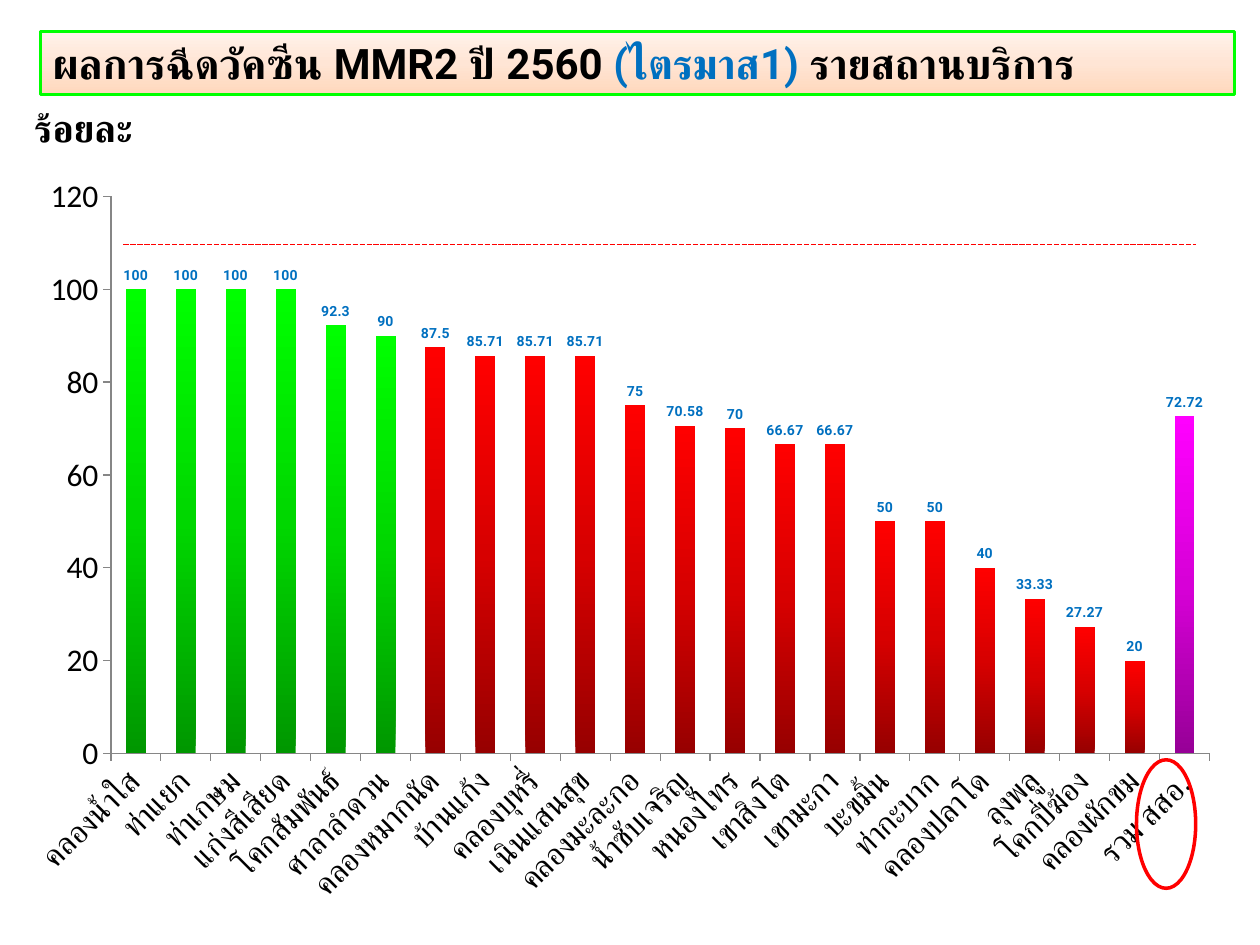
from copy import deepcopy
from dataclasses import dataclass

from lxml.etree import SubElement
from pptx import Presentation
from pptx.chart.data import CategoryChartData
from pptx.dml.color import RGBColor
from pptx.enum.chart import XL_CHART_TYPE, XL_LABEL_POSITION, XL_TICK_MARK
from pptx.enum.dml import MSO_LINE
from pptx.enum.shapes import MSO_CONNECTOR, MSO_SHAPE
from pptx.enum.text import MSO_ANCHOR, MSO_AUTO_SIZE, PP_ALIGN
from pptx.oxml.ns import qn
from pptx.slide import Slide
from pptx.util import Inches, Pt

COVERAGE = {
    "คลองน้ำใส": 100, "ท่าแยก": 100, "ท่าเกษม": 100, "แก่งสีเสียด": 100,
    "โคกสัมพันธ์": 92.3, "ศาลาลำดวน": 90, "คลองหมากนัด": 87.5,
    "บ้านแก้ง": 85.71, "คลองบุหรี่": 85.71, "เนินแสนสุข": 85.71,
    "คลองมะละกอ": 75, "น้ำซับเจริญ": 70.58, "หนองไทร": 70,
    "เขาสิงโต": 66.67, "เขามะกา": 66.67, "บะขมิ้น": 50, "ท่ากะบาก": 50,
    "คลองปลาโด": 40, "ลุงพลู": 33.33, "โคกปี่ฆ้อง": 27.27,
    "คลองผักขม": 20, "รวม สสอ.": 72.72,
}
TOTAL = "รวม สสอ."
PASS_MARK = 90
RED = ("970000", "D70000", "FF0000")
GREEN = ("009700", "00D700", "00FF00")
MAGENTA = ("970097", "D700D7", "FF00FF")
PEACH = ("FFD8BC", "FFE5D5", "FFF2EA")


def rgb(value):
    return RGBColor.from_string(value)


def set_font(font, name, size, color, bold=False):
    font.name, font.size, font.bold = name, Pt(size), bold
    font.color.rgb = rgb(color)


def set_gradient(fill, colors):
    fill.gradient()
    fill.gradient_angle = 90
    first = fill.gradient_stops[0]._gs
    first.addnext(deepcopy(first))
    for stop, color, position in zip(fill.gradient_stops, colors, (0, 0.5, 1)):
        stop.color.rgb = rgb(color)
        stop.position = position


def set_layout(parent, index, **values):
    for existing in parent.findall(qn("c:layout")):
        parent.remove(existing)
    layout = SubElement(parent, qn("c:layout"))
    parent.insert(index, layout)
    manual = SubElement(layout, qn("c:manualLayout"))
    for tag, value in values.items():
        SubElement(manual, qn(f"c:{tag}")).set("val", str(value))


@dataclass
class CoverageSlide:
    """Draws the elements of the vaccine coverage slide in one style."""

    slide: Slide
    heading_font: str = "Roboto"
    axis_font: str = "Calibri"
    text_color: str = "000000"
    accent: str = "0070C0"

    def chart(self, left, top, width, height, title, values):
        data = CategoryChartData()
        data.categories = list(values)
        data.add_series(title, list(values.values()))
        chart = self.slide.shapes.add_chart(
            XL_CHART_TYPE.COLUMN_CLUSTERED, Inches(left), Inches(top),
            Inches(width), Inches(height), data).chart
        set_font(chart.font, self.axis_font, 18, self.text_color)
        chart.has_legend = False
        self.chart_title(chart, title)
        self.axes(chart)
        self.columns(chart.plots[0], values)
        set_layout(chart._chartSpace.chart.plotArea, 0, layoutTarget="inner",
                   xMode="edge", yMode="edge", x=0.76 / width, y=0.96 / height,
                   w=8.72 / width, h=4.42 / height)

    def chart_title(self, chart, text):
        chart.has_title = True
        title = chart.chart_title
        title.text_frame.text = text
        run = title.text_frame.paragraphs[0].runs[0]
        set_font(run.font, self.heading_font, 21.6, self.text_color, True)
        set_layout(title._element, 1, xMode="edge", yMode="edge", x=0.01, y=0.03)

    def axes(self, chart):
        for axis in (chart.category_axis, chart.value_axis):
            axis.has_major_gridlines = False
            axis.major_tick_mark = XL_TICK_MARK.OUTSIDE
            axis.minor_tick_mark = XL_TICK_MARK.NONE
            axis.format.line.color.rgb = rgb("868686")
            axis.format.line.width = Pt(0.75)
            set_font(axis.tick_labels.font, self.axis_font, 18, self.text_color)
        chart.category_axis._element.txPr.bodyPr.set("rot", "-2700000")
        scale = chart.value_axis
        scale.minimum_scale, scale.maximum_scale, scale.major_unit = 0, 120, 20

    def columns(self, plot, values):
        plot.gap_width = 150
        plot.vary_by_categories = False
        series = plot.series[0]
        set_gradient(series.format.fill, RED)
        for index, (name, value) in enumerate(values.items()):
            if name == TOTAL:
                set_gradient(series.points[index].format.fill, MAGENTA)
            elif value >= PASS_MARK:
                set_gradient(series.points[index].format.fill, GREEN)
        labels = series.data_labels
        labels.show_value = True
        labels.position = XL_LABEL_POSITION.OUTSIDE_END
        set_font(labels.font, self.heading_font, 8, self.accent, True)

    def target_line(self, left, right, top):
        line = self.slide.shapes.add_connector(
            MSO_CONNECTOR.STRAIGHT, Inches(left), Inches(top),
            Inches(right), Inches(top))
        line.line.color.rgb = rgb("FF0000")
        line.line.width = Pt(1)
        line.line.dash_style = MSO_LINE.SQUARE_DOT
        SubElement(line._element.spPr, qn("a:effectLst"))

    def outline(self, kind, left, top, width, height, color, weight):
        shape = self.slide.shapes.add_shape(
            kind, Inches(left), Inches(top), Inches(width), Inches(height))
        shape.shadow.inherit = False
        shape.fill.background()
        shape.line.color.rgb = rgb(color)
        shape.line.width = Pt(weight)
        return shape

    def banner(self, left, top, width, height, parts):
        shape = self.outline(MSO_SHAPE.RECTANGLE, left, top, width, height,
                             "00FF00", 1.5)
        set_gradient(shape.fill, PEACH)
        text_frame = shape.text_frame
        text_frame.word_wrap = True
        text_frame.auto_size = MSO_AUTO_SIZE.SHAPE_TO_FIT_TEXT
        text_frame.vertical_anchor = MSO_ANCHOR.TOP
        paragraph = text_frame.paragraphs[0]
        paragraph.alignment = PP_ALIGN.LEFT
        for text, color in parts:
            run = paragraph.add_run()
            run.text = text
            set_font(run.font, self.heading_font, 24, color, True)

    def highlight(self, left, top, width, height):
        self.outline(MSO_SHAPE.OVAL, left, top, width, height, "FF0000", 2)


def main():
    presentation = Presentation()
    presentation.slide_width, presentation.slide_height = Inches(10), Inches(7.5)
    page = CoverageSlide(
        presentation.slides.add_slide(presentation.slide_layouts[6]))
    page.chart(0.12, 0.6, 9.69, 6.69, "ร้อยละ", COVERAGE)
    page.target_line(0.98, 9.49, 1.94)
    page.banner(0.32, 0.25, 9.48, 0.5, [
        ("ผลการฉีดวัคซีน MMR2 ปี 2560 ", page.text_color),
        ("(ไตรมาส1) ", page.accent),
        ("รายสถานบริการ", page.text_color),
    ])
    page.highlight(9.02, 6.03, 0.47, 1.02)
    presentation.save("out.pptx")


if __name__ == "__main__":
    main()
